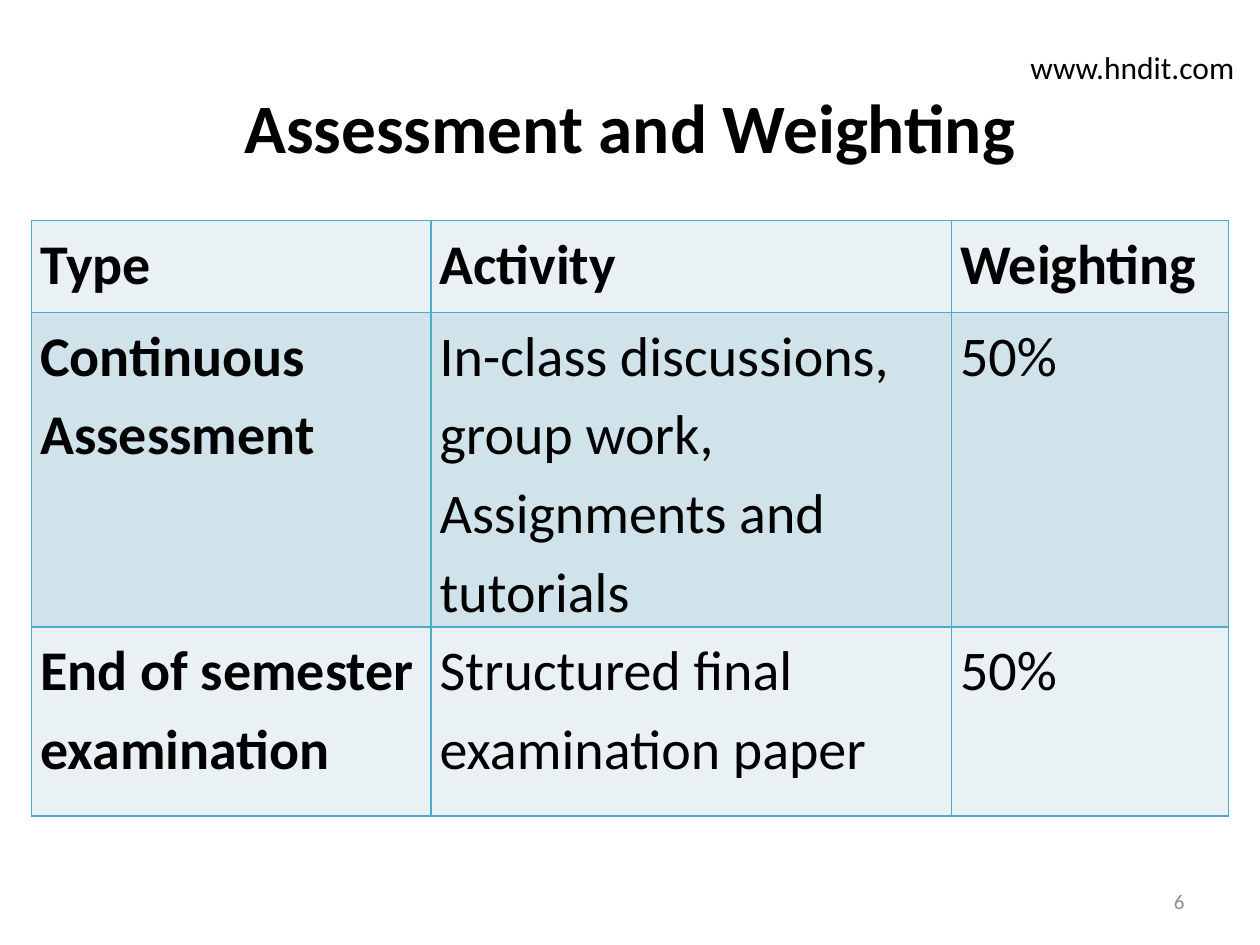
from lxml.etree import SubElement
from pptx import Presentation
from pptx.dml.color import RGBColor
from pptx.enum.text import MSO_ANCHOR, PP_ALIGN
from pptx.oxml.ns import qn
from pptx.util import Inches, Pt

HUES = {
    "text": "000000",
    "page": "8C8C8C",
    "line": "4BACC6",
    "pale": "E9F1F5",
    "band": "D0E3EA",
}
FONT = "Calibri"
ROWS = [
    ["Type", "Activity", "Weighting"],
    ["Continuous Assessment",
     "In-class discussions, group work, Assignments and tutorials", "50%"],
    ["End of semester examination", "Structured final examination paper", "50%"],
]
WIDTHS = [3.17, 4.13, 2.2]
HEIGHTS = [0.73, 2.27, 1.5]


def add_run(para, text, size, bold=False, hue="text"):
    run = para.add_run()
    run.text = text
    run.font.name = FONT
    run.font.size = Pt(size)
    run.font.bold = bold
    run.font.color.rgb = RGBColor.from_string(HUES[hue])


def set_title(slide, left, top, width, height):
    title = slide.shapes.title
    title.left, title.top = Inches(left), Inches(top)
    title.width, title.height = Inches(width), Inches(height)
    frame = title.text_frame
    frame.vertical_anchor = MSO_ANCHOR.TOP
    frame.margin_top = 0
    para = frame.paragraphs[0]
    para.alignment = PP_ALIGN.CENTER
    add_run(para, "Assessment and Weighting", 39.6, bold=True)


def add_edges(cell):
    """Draw a thin line on all four sides; call before the cell is filled."""
    props = cell._tc.get_or_add_tcPr()
    for side in ("a:lnL", "a:lnR", "a:lnT", "a:lnB"):
        line = SubElement(props, qn(side), w=str(Pt(1)))
        fill = SubElement(line, qn("a:solidFill"))
        SubElement(fill, qn("a:srgbClr"), val=HUES["line"])


def fill_cell(cell, text, bold, hue):
    add_edges(cell)
    cell.fill.solid()
    cell.fill.fore_color.rgb = RGBColor.from_string(HUES[hue])
    cell.margin_left = cell.margin_right = Inches(0.07)
    cell.margin_top = cell.margin_bottom = 0
    para = cell.text_frame.paragraphs[0]
    para.line_spacing = 1.15
    add_run(para, text, 32, bold)


def add_grid(slide, left, top):
    table = slide.shapes.add_table(
        len(ROWS), len(WIDTHS), Inches(left), Inches(top),
        Inches(sum(WIDTHS)), Inches(sum(HEIGHTS))).table
    for col, width in zip(table.columns, WIDTHS):
        col.width = Inches(width)
    for row, height in zip(table.rows, HEIGHTS):
        row.height = Inches(height)
    for i, texts in enumerate(ROWS):
        for j, text in enumerate(texts):
            fill_cell(table.cell(i, j), text, bold=i == 0 or j == 0,
                      hue="band" if i % 2 else "pale")


def add_label(slide, text, left, top, width, height, size,
              hue="text", align=PP_ALIGN.LEFT, anchor=MSO_ANCHOR.TOP):
    box = slide.shapes.add_textbox(
        Inches(left), Inches(top), Inches(width), Inches(height))
    frame = box.text_frame
    frame.word_wrap = True
    frame.vertical_anchor = anchor
    para = frame.paragraphs[0]
    para.alignment = align
    add_run(para, text, size, hue=hue)


def main():
    deck = Presentation()
    deck.slide_width, deck.slide_height = Inches(10), Inches(7.5)
    slide = deck.slides.add_slide(deck.slide_layouts.get_by_name("Title Only"))
    set_title(slide, 0.5, 0.67, 9, 1.25)
    add_grid(slide, 0.25, 1.75)
    add_label(slide, "6", 7.17, 6.95, 2.33, 0.4, 12, "page",
              PP_ALIGN.RIGHT, MSO_ANCHOR.MIDDLE)
    add_label(slide, "www.hndit.com", 8.08, 0.33, 1.92, 0.4, 18)
    deck.save("out.pptx")


if __name__ == "__main__":
    main()
